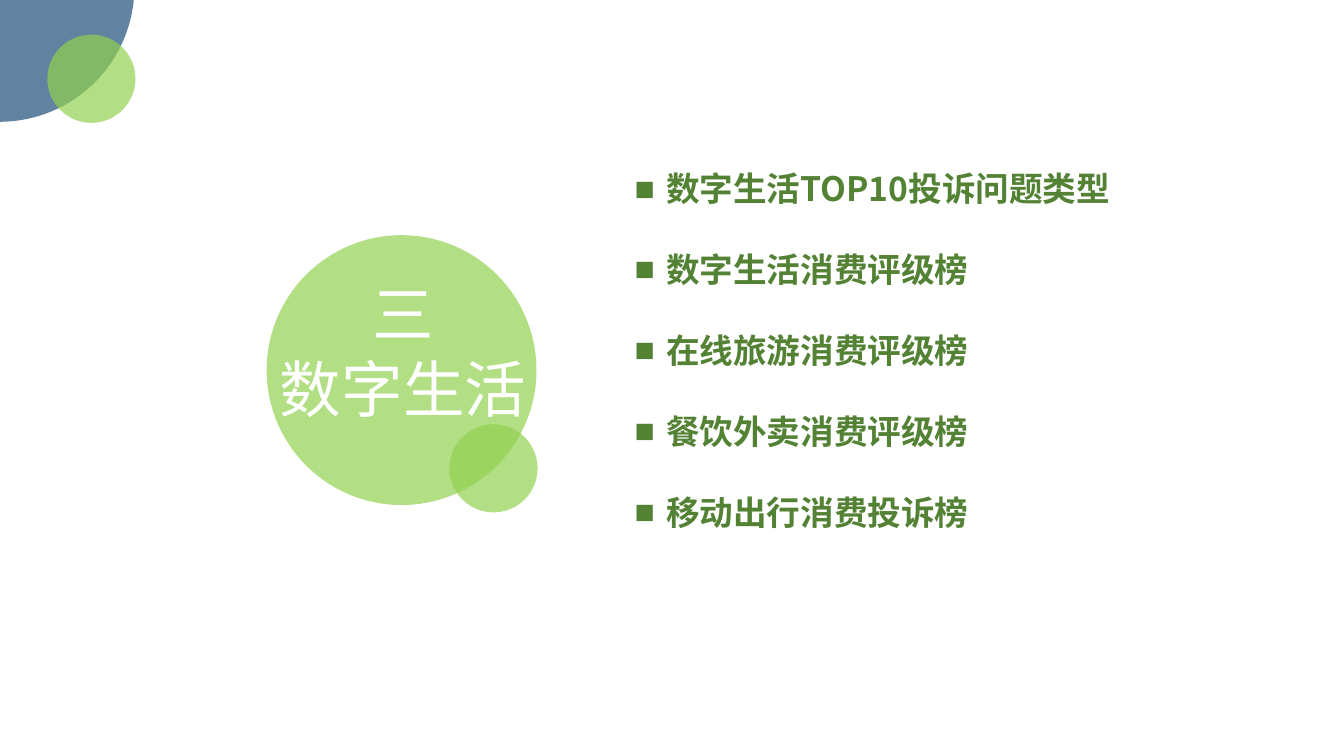
from lxml import etree
from pptx import Presentation
from pptx import util as u
from pptx.dml.color import RGBColor
from pptx.enum import shapes, text
from pptx.oxml import ns

PX = 9525  # 96 px to the inch
GREEN, BLUE, DARK_GREEN, WHITE = "92D050", "1F4E79", "548235", "FFFFFF"
TOPICS = [
    "数字生活TOP10投诉问题类型",
    "数字生活消费评级榜",
    "在线旅游消费评级榜",
    "餐饮外卖消费评级榜",
    "移动出行消费投诉榜",
]


def px(length):
    return u.Emu(length * PX)


def rgb(color):
    return RGBColor.from_string(color)


def add_child(parent, tag, **attributes):
    return etree.SubElement(parent, ns.qn(tag), attributes)


class SectionSlide:
    font = "Noto Sans CJK SC"
    opacity = "70000"

    def __init__(self, prs):
        self.slide = prs.slides.add_slide(prs.slide_layouts[5])

    def disc(self, left, top, size, color):
        """Add a translucent circle without an outline."""
        disc = self.slide.shapes.add_shape(
            shapes.MSO_SHAPE.OVAL, px(left), px(top), px(size), px(size))
        disc.shadow.inherit = False
        disc.fill.solid()
        disc.fill.fore_color.rgb = rgb(color)
        disc.line.fill.background()
        tint = disc._element.spPr.find(ns.qn("a:solidFill")).find(ns.qn("a:srgbClr"))
        add_child(tint, "a:alpha", val=self.opacity)

    def set_text(self, frame, lines, *, size, color, pitch, bold=False,
                 align=text.PP_ALIGN.LEFT, bullet=None, indent=0):
        """Fill a text frame, one paragraph a line, at a fixed line pitch in points."""
        frame.word_wrap = True
        frame.auto_size = text.MSO_AUTO_SIZE.NONE
        frame.vertical_anchor = text.MSO_ANCHOR.TOP
        frame.text = "\n".join(lines)
        for paragraph in frame.paragraphs:
            paragraph.alignment = align
            paragraph.line_spacing = u.Pt(pitch)
            paragraph.space_before = u.Pt(0)
            if bullet:
                props = paragraph._p.get_or_add_pPr()
                props.set("marL", str(px(indent)))
                props.set("indent", str(-px(indent)))
                add_child(props, "a:buFont", typeface="Arial")
                add_child(props, "a:buChar", char=bullet)
            for run in paragraph.runs:
                run.font.size = u.Pt(size)
                run.font.bold = bold
                run.font.color.rgb = rgb(color)
                run.font.name = self.font
                add_child(run._r.get_or_add_rPr(), "a:ea", typeface=self.font)

    def title(self, left, top, width, height, lines, **style):
        """Format the title placeholder and bring it in front of the discs so far."""
        title = self.slide.shapes.title
        title.left, title.top = px(left), px(top)
        title.width, title.height = px(width), px(height)
        self.set_text(title.text_frame, lines, **style)
        self.slide.shapes._spTree.append(title._element)

    def text_box(self, left, top, width, height, lines, **style):
        box = self.slide.shapes.add_textbox(px(left), px(top), px(width), px(height))
        self.set_text(box.text_frame, lines, **style)


def main():
    prs = Presentation()
    prs.slide_width, prs.slide_height = px(1280), px(720)
    section = SectionSlide(prs)
    section.disc(254, 224, 257, GREEN)
    section.disc(428, 404, 84, GREEN)
    section.title(176, 258, 416, 162, ["三", "数字生活"], size=44, color=WHITE,
                  pitch=53, align=text.PP_ALIGN.CENTER)
    section.text_box(595, 117, 615, 395, TOPICS, size=24, color=DARK_GREEN,
                     pitch=57.7, bold=True, bullet="■", indent=30)
    section.disc(-129, -141, 257, BLUE)
    section.disc(45, 33, 84, GREEN)
    prs.save("out.pptx")


if __name__ == "__main__":
    main()
